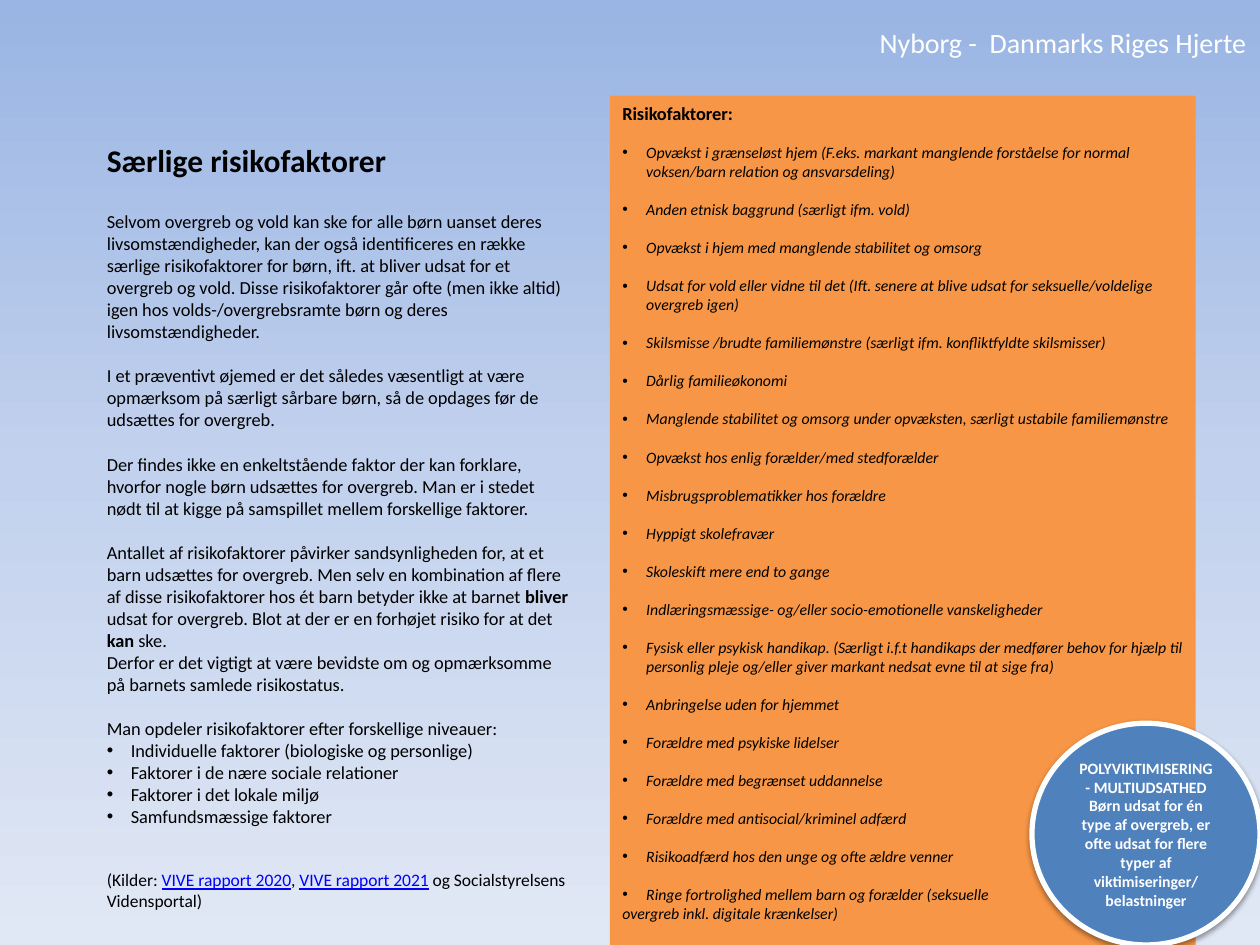
from copy import deepcopy

from lxml import etree
from pptx import Presentation
from pptx.dml.color import RGBColor
from pptx.enum import shapes, text
from pptx.oxml.ns import qn
from pptx.util import Inches, Pt

FONT = "Calibri"
BLACK, WHITE, LINK = "000000", "FFFFFF", "0000FF"
SKY = [(0, "9AB5E4"), (0.5, "C2D1ED"), (1, "E1E8F5")]
INDENT = Inches(0.19)

INTRO = [
    "Selvom overgreb og vold kan ske for alle børn uanset deres livsomstændigheder, kan der også identificeres en række særlige risikofaktorer for børn, ift. at bliver udsat for et overgreb og vold. Disse risikofaktorer går ofte (men ikke altid) igen hos volds-/overgrebsramte børn og deres livsomstændigheder.",
    "I et præventivt øjemed er det således væsentligt at være opmærksom på særligt sårbare børn, så de opdages før de udsættes for overgreb.",
    "Der findes ikke en enkeltstående faktor der kan forklare, hvorfor nogle børn udsættes for overgreb. Man er i stedet nødt til at kigge på samspillet mellem forskellige faktorer.",
    "Antallet af risikofaktorer påvirker sandsynligheden for, at et barn udsættes for overgreb. Men selv en kombination af flere af disse risikofaktorer hos ét barn betyder ikke at barnet |bliver| udsat for overgreb. Blot at der er en forhøjet risiko for at det |kan| ske.",
]
CONCLUSION = "Derfor er det vigtigt at være bevidste om og opmærksomme på barnets samlede risikostatus."
LEVELS_LEAD = "Man opdeler risikofaktorer efter forskellige niveauer:"
LEVELS = [
    "Individuelle faktorer (biologiske og personlige)",
    "Faktorer i de nære sociale relationer",
    "Faktorer i det lokale miljø",
    "Samfundsmæssige faktorer",
]
SOURCES = "(Kilder: |VIVE rapport 2020|, |VIVE rapport 2021| og Socialstyrelsens Vidensportal)"
RISKS = [
    "Opvækst i grænseløst hjem (F.eks. markant manglende forståelse for normal voksen/barn relation og ansvarsdeling)",
    "Anden etnisk baggrund (særligt ifm. vold)",
    "Opvækst i hjem med manglende stabilitet og omsorg",
    "Udsat for vold eller vidne til det (Ift. senere at blive udsat for seksuelle/voldelige overgreb igen)",
    "Skilsmisse /brudte familiemønstre (særligt ifm. konfliktfyldte skilsmisser)",
    "Dårlig familieøkonomi",
    "Manglende stabilitet og omsorg under opvæksten, særligt ustabile familiemønstre",
    "Opvækst hos enlig forælder/med stedforælder",
    "Misbrugsproblematikker hos forældre",
    "Hyppigt skolefravær",
    "Skoleskift mere end to gange",
    "Indlæringsmæssige- og/eller socio-emotionelle vanskeligheder",
    "Fysisk eller psykisk handikap. (Særligt i.f.t handikaps der medfører behov for hjælp til personlig pleje og/eller giver markant nedsat evne til at sige fra)",
    "Anbringelse uden for hjemmet",
    "Forældre med psykiske lidelser",
    "Forældre med begrænset uddannelse",
    "Forældre med antisocial/kriminel adfærd",
    "Risikoadfærd hos den unge og ofte ældre venner",
    "Ringe fortrolighed mellem barn og forælder (seksuelle",
]
RISKS_END = "overgreb inkl. digitale krænkelser)"
POLYVICTIM = [
    "POLYVIKTIMISERING",
    "- MULTIUDSATHED",
    "Børn udsat for én type af overgreb, er ofte udsat for flere typer af viktimiseringer/",
    "belastninger",
]


def rgb(value):
    """Turn a hex string into a colour."""
    return RGBColor.from_string(value)


def write(frame, words, size, color=BLACK, gap=0, bullet=False, bold=False,
          italic=False, links=False, align=text.PP_ALIGN.LEFT):
    """Add a paragraph whose parts between bars are bold or look like links."""
    fresh = len(frame.paragraphs) == 1 and not frame.paragraphs[0].runs
    line = frame.paragraphs[0] if fresh else frame.add_paragraph()
    line.alignment = align
    line.space_before = Pt(gap)
    if bullet:
        props = line._p.get_or_add_pPr()
        props.set("marL", str(INDENT))
        props.set("indent", str(-INDENT))
        etree.SubElement(props, qn("a:buFont"), typeface="Arial")
        etree.SubElement(props, qn("a:buChar"), char="•")
    for index, words_part in enumerate(words.split("|")):
        marked = index % 2 == 1
        run = line.add_run()
        run.text = words_part
        run.font.name = FONT
        run.font.size = Pt(size)
        run.font.bold = bold or (marked and not links)
        run.font.italic = italic
        run.font.underline = marked and links
        run.font.color.rgb = rgb(LINK if marked and links else color)


def text_frame(slide, box):
    """Add a wrapping text box and return its frame."""
    frame = slide.shapes.add_textbox(*map(Inches, box)).text_frame
    frame.word_wrap = True
    return frame


def panel(slide, kind, box, fill, anchor):
    """Add a filled shape without outline or shadow."""
    shape = slide.shapes.add_shape(kind, *map(Inches, box))
    shape.shadow.inherit = False
    shape.fill.solid()
    shape.fill.fore_color.rgb = rgb(fill)
    shape.line.fill.background()
    shape.text_frame.word_wrap = True
    shape.text_frame.vertical_anchor = anchor
    return shape


def paint_background(slide):
    """Give the slide its vertical three-stop gradient."""
    fill = slide.background.fill
    fill.gradient()
    fill.gradient_angle = 270
    stop_list = next(slide._element.iter(qn("a:gsLst")))
    stop_list.append(deepcopy(stop_list[0]))
    for stop, (position, color) in zip(fill.gradient_stops, SKY):
        stop.position = position
        stop.color.rgb = rgb(color)


def add_header(slide, box):
    """Place the slogan at the top right."""
    write(text_frame(slide, box), "Nyborg -  Danmarks Riges Hjerte", 16, WHITE,
          align=text.PP_ALIGN.RIGHT)


def add_title(slide, box):
    """Place the slide title."""
    write(text_frame(slide, box), "Særlige risikofaktorer", 18, bold=True)


def add_explanation(slide, box):
    """Place the running text, the levels and the sources."""
    frame = text_frame(slide, box)
    size, gap = 10.5, 12.6
    for index, words in enumerate(INTRO):
        write(frame, words, size, gap=gap if index else 0)
    write(frame, CONCLUSION, size)
    write(frame, LEVELS_LEAD, size, gap=gap)
    for level in LEVELS:
        write(frame, level, size, bullet=True)
    write(frame, SOURCES, 10, gap=24, links=True)


def add_risks(slide, box):
    """Place the orange panel listing the risk factors."""
    frame = panel(slide, shapes.MSO_SHAPE.RECTANGLE, box, "F79646",
                  text.MSO_ANCHOR.TOP).text_frame
    write(frame, "Risikofaktorer:", 10.5, bold=True)
    for risk in RISKS:
        write(frame, risk, 9, gap=10.9, bullet=True, italic=True)
    write(frame, RISKS_END, 9, italic=True)


def add_polyvictim(slide, box):
    """Place the blue circle with its white ring and soft shadow."""
    circle = panel(slide, shapes.MSO_SHAPE.OVAL, box, "4F81BD", text.MSO_ANCHOR.MIDDLE)
    circle.line.color.rgb = rgb(WHITE)
    circle.line.width = Pt(3)
    effects = circle._element.spPr.find(qn("a:effectLst"))
    shadow = etree.SubElement(effects, qn("a:outerShdw"), blurRad=str(Pt(3.1)),
                              dist=str(Pt(1.6)), dir="5400000", rotWithShape="0")
    tint = etree.SubElement(shadow, qn("a:srgbClr"), val=BLACK)
    etree.SubElement(tint, qn("a:alpha"), val="38000")
    for words in POLYVICTIM:
        write(circle.text_frame, words, 9, WHITE, bold=True, align=text.PP_ALIGN.CENTER)


def main():
    """Build and save the slide."""
    deck = Presentation()
    deck.slide_width, deck.slide_height = Inches(10), Inches(7.5)
    slide = deck.slides.add_slide(deck.slide_layouts[6])
    paint_background(slide)
    add_header(slide, (-0.01, 0.15, 10, 0.37))
    add_title(slide, (0.75, 1.07, 8.5, 0.79))
    add_explanation(slide, (0.75, 1.62, 3.86, 5.72))
    add_risks(slide, (4.84, 0.76, 4.65, 6.74))
    add_polyvictim(slide, (8.19, 5.74, 1.81, 1.76))
    deck.save("out.pptx")


if __name__ == "__main__":
    main()
